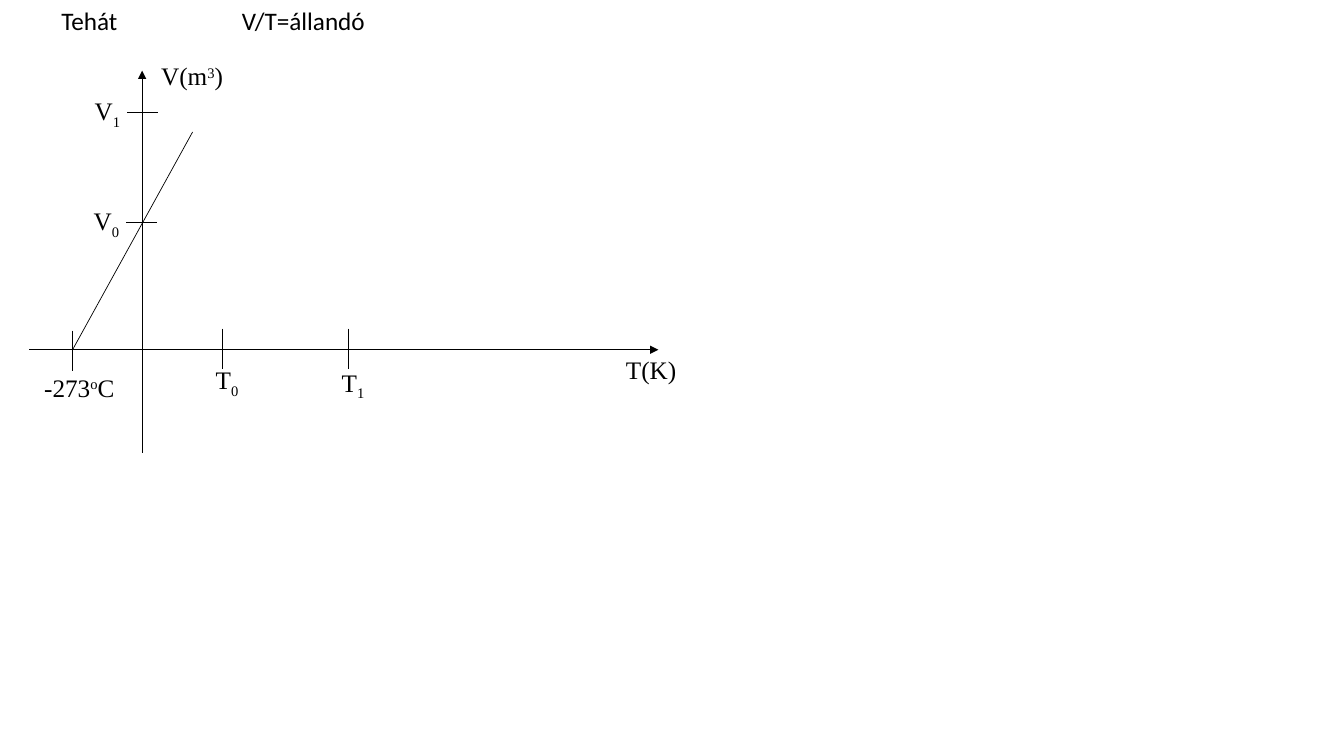
from lxml.etree import SubElement
from pptx import Presentation
from pptx.dml.color import RGBColor
from pptx.enum.shapes import MSO_CONNECTOR
from pptx.oxml.ns import qn
from pptx.util import Inches, Pt

COLORS = {"ink": "000000"}
SUPER, SUB = 30, -25
ORIGIN_X, ORIGIN_Y = 1.41, 3.47
ZERO_X = 0.72


def add_line(slide, x1, y1, x2, y2, arrow=False):
    line = slide.shapes.add_connector(
        MSO_CONNECTOR.STRAIGHT, Inches(x1), Inches(y1), Inches(x2), Inches(y2))
    line.line.color.rgb = RGBColor.from_string(COLORS["ink"])
    line.line.width = Pt(0.5)
    if arrow:
        SubElement(line.line._get_or_add_ln(), qn("a:tailEnd"), type="triangle")
    SubElement(line._element.spPr, qn("a:effectLst"))


def add_label(slide, x, y, width, pieces, font="Times New Roman"):
    box = slide.shapes.add_textbox(Inches(x), Inches(y), Inches(width), Inches(0.4))
    tf = box.text_frame
    tf.word_wrap = True
    p = tf.paragraphs[0]
    for text, baseline in pieces:
        r = p.add_run()
        r.text = text
        r.font.name = font
        r.font.size = Pt(18)
        r.font.color.rgb = RGBColor.from_string(COLORS["ink"])
        if baseline:
            r.font._element.set("baseline", str(baseline * 1000))
    return p


def add_tab_stop(p, position):
    tabs = SubElement(p._p.get_or_add_pPr(), qn("a:tabLst"))
    SubElement(tabs, qn("a:tab"), pos=str(Inches(position)), algn="l")


def add_axes(slide):
    add_line(slide, ORIGIN_X, 4.49, ORIGIN_X, 0.7, arrow=True)
    add_line(slide, 0.29, ORIGIN_Y, 6.53, ORIGIN_Y, arrow=True)
    add_label(slide, 1.5, 0.55, 1.05, [("V(m", 0), ("3", SUPER), (")", 0)])
    add_label(slide, 6.11, 3.47, 0.82, [("T(K)", 0)])


def add_volume_tick(slide, x, y, label_y, width, index):
    add_line(slide, x, y, x + 0.31, y)
    add_label(slide, x - 0.42, label_y, width, [("V", 0), (index, SUB)])


def add_temperature_tick(slide, x, y, label_x, label_y, width, pieces):
    add_line(slide, x, y, x, y + 0.4)
    add_label(slide, label_x, label_y, width, pieces)


def main():
    prs = Presentation()
    prs.slide_width, prs.slide_height = Inches(13.33), Inches(7.5)
    slide = prs.slides.add_slide(prs.slide_layouts[6])

    p = add_label(slide, 0.51, 0, 4.68, [("Tehát\tV/T=állandó", 0)], "Calibri")
    add_tab_stop(p, 1.79)

    add_axes(slide)
    add_volume_tick(slide, 1.26, 1.11, 0.9, 0.61, "1")
    add_volume_tick(slide, 1.25, 2.21, 1.99, 0.97, "0")
    add_temperature_tick(slide, ZERO_X, 3.28, 0.34, 3.64, 0.97,
                         [("-273", 0), ("o", SUPER), ("C", 0)])
    add_temperature_tick(slide, 2.21, 3.26, 2.04, 3.57, 0.51, [("T", 0), ("0", SUB)])
    add_temperature_tick(slide, 3.46, 3.26, 3.29, 3.59, 0.54, [("T", 0), ("1", SUB)])
    add_line(slide, ZERO_X, ORIGIN_Y, 1.91, 1.31)

    prs.save("out.pptx")


if __name__ == "__main__":
    main()
